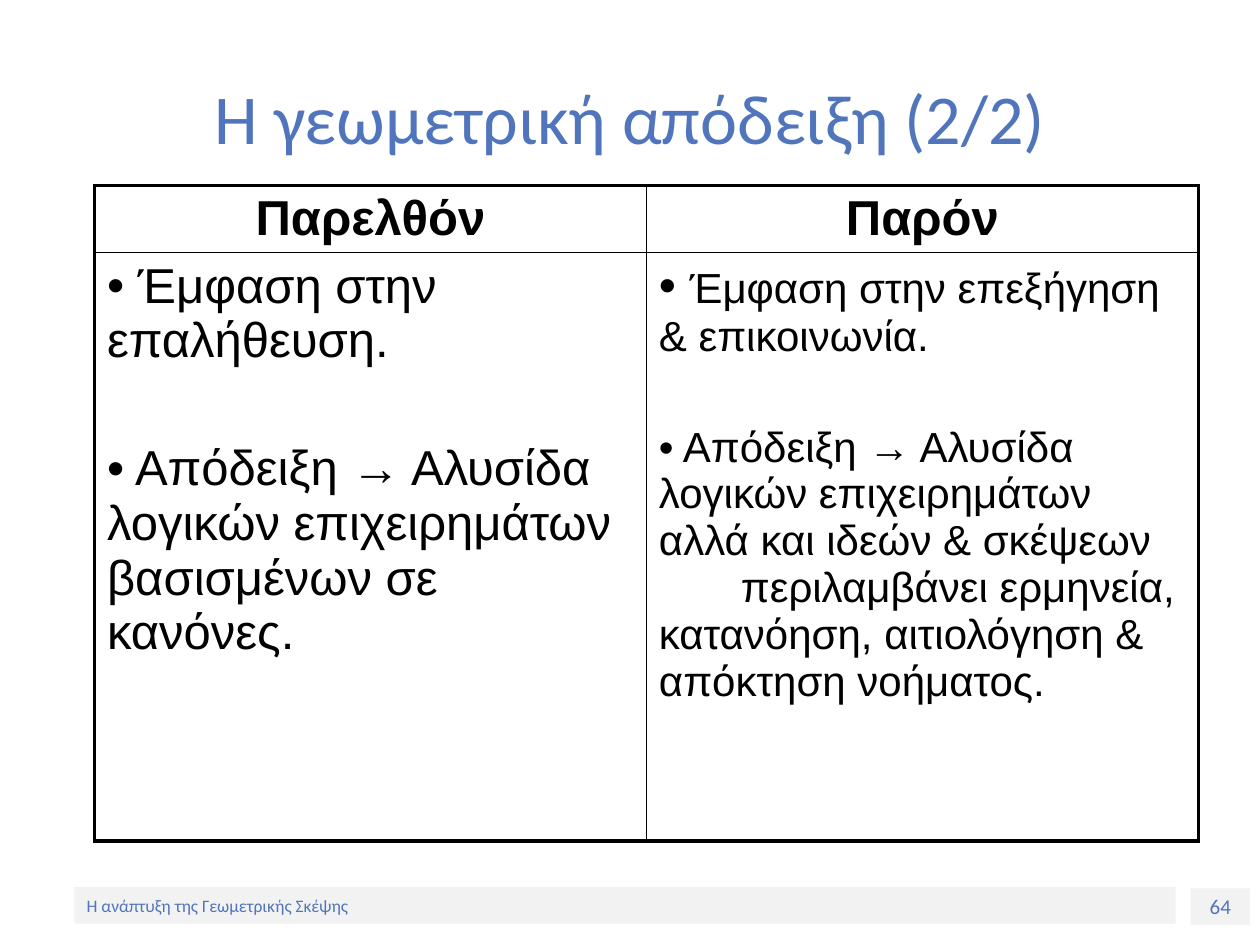
from pptx import Presentation
from pptx.dml.color import RGBColor
from pptx.enum.shapes import MSO_SHAPE as Shape
from pptx.enum.text import MSO_ANCHOR as Anchor, PP_ALIGN as Align
from pptx.oxml.ns import qn
from pptx.util import Inches, Pt
from lxml.etree import SubElement


def color(value):
    return RGBColor.from_string(value)


def write(para, text, size=28, font="Arial", ink="000000", bold=False,
          align=Align.LEFT, before=0, indent=0, bullet=None):
    """Add a formatted span to a paragraph."""
    para.alignment = align
    para.space_before = Pt(before)
    span = para.add_run()
    span.text = text
    span.font.size, span.font.name, span.font.bold = Pt(size), font, bold
    span.font.color.rgb = color(ink)
    props = para._p.get_or_add_pPr()
    props.set("marL", "0")
    props.set("indent", str(Inches(indent)))
    if bullet:
        SubElement(props, qn("a:buFont")).set("typeface", "Arial")
        SubElement(props, qn("a:buChar")).set("char", bullet)


class SlideBuilder:
    accent, band, line = "5075BC", "F2F2F2", "000000"
    font = "Calibri"
    thin, thick = 1, 2.25

    def __init__(self, deck):
        self.page = deck.slides.add_slide(deck.slide_layouts[5])

    def title(self, text, left, top, width, height):
        box = self.page.shapes.title
        box.left, box.top = Inches(left), Inches(top)
        box.width, box.height = Inches(width), Inches(height)
        box.text_frame.vertical_anchor = Anchor.MIDDLE
        write(box.text_frame.paragraphs[0], text, size=40, font=self.font,
              ink=self.accent, align=Align.CENTER)

    def footer(self, text, left, top, width, height, size, align):
        box = self.page.shapes.add_shape(
            Shape.RECTANGLE, Inches(left), Inches(top), Inches(width), Inches(height))
        box.shadow.inherit = False
        box.fill.solid()
        box.fill.fore_color.rgb = color(self.band)
        box.line.fill.background()
        box.text_frame.vertical_anchor = Anchor.MIDDLE
        write(box.text_frame.paragraphs[0], text, size=size, font=self.font,
              ink=self.accent, align=align)

    def border(self, cell, side, width):
        edge = SubElement(cell._tc.get_or_add_tcPr(), qn(f"a:ln{side}"), w=str(Pt(width)))
        SubElement(SubElement(edge, qn("a:solidFill")), qn("a:srgbClr"), val=self.line)

    def table(self, left, top, widths, heights, rows):
        grid = self.page.shapes.add_table(
            len(heights), len(widths), Inches(left), Inches(top),
            Inches(sum(widths)), Inches(sum(heights))).table
        grid.first_row = grid.horz_banding = False
        for column, width in zip(grid.columns, widths):
            column.width = Inches(width)
        for row, height in zip(grid.rows, heights):
            row.height = Inches(height)
        last_row, last_col = len(heights) - 1, len(widths) - 1
        for r, row in enumerate(rows):
            for c, paragraphs in enumerate(row):
                cell = grid.cell(r, c)
                cell.margin_left = cell.margin_right = Inches(0.1)
                cell.margin_top = cell.margin_bottom = Inches(0.05)
                # Thick outer frame, thin inner lines
                outer = {"L": c == 0, "R": c == last_col, "T": r == 0, "B": r == last_row}
                for side, is_outer in outer.items():
                    self.border(cell, side, self.thick if is_outer else self.thin)
                cell.fill.background()
                for i, spans in enumerate(paragraphs):
                    frame = cell.text_frame
                    para = frame.add_paragraph() if i else frame.paragraphs[0]
                    for text, style in spans:
                        write(para, text, **style)


def main():
    deck = Presentation()
    deck.slide_width, deck.slide_height = Inches(10), Inches(7.5)
    slide = SlideBuilder(deck)

    # Footer band and page number
    slide.footer("64", 9.45, 7.05, 0.47, 0.29, 12, Align.CENTER)
    slide.footer("H ανάπτυξη της Γεωμετρικής Σκέψης", 0.59, 7.04, 8.74, 0.29, 10, Align.LEFT)

    slide.title("Η γεωμετρική απόδειξη (2/2)", 0.5, 0.3, 9, 1.25)

    # Comparison of past and present: cells hold paragraphs, paragraphs hold spans
    head = dict(bold=True, align=Align.CENTER)
    item = dict(bullet="•")
    past = [
        [(" Έμφαση στην επαλήθευση.", item)],
        [(" Απόδειξη → Αλυσίδα λογικών επιχειρημάτων βασισμένων σε κανόνες.",
          dict(item, before=42))],
    ]
    present = [
        [(" ", item), ("Έμφαση στην επεξήγηση & επικοινωνία.", dict(size=24))],
        [(" Απόδειξη → Αλυσίδα λογικών επιχειρημάτων αλλά και ιδεών & σκέψεων",
          dict(item, size=24, before=36.5))],
        [("περιλαμβάνει ερμηνεία, κατανόηση, αιτιολόγηση & απόκτηση νοήματος.",
          dict(size=24, indent=0.65))],
    ]
    slide.table(0.75, 1.47, [4.38] * 2, [0.52, 4.67], [
        [[[("Παρελθόν", head)]], [[("Παρόν", head)]]],
        [past, present],
    ])

    deck.save("out.pptx")


if __name__ == "__main__":
    main()
